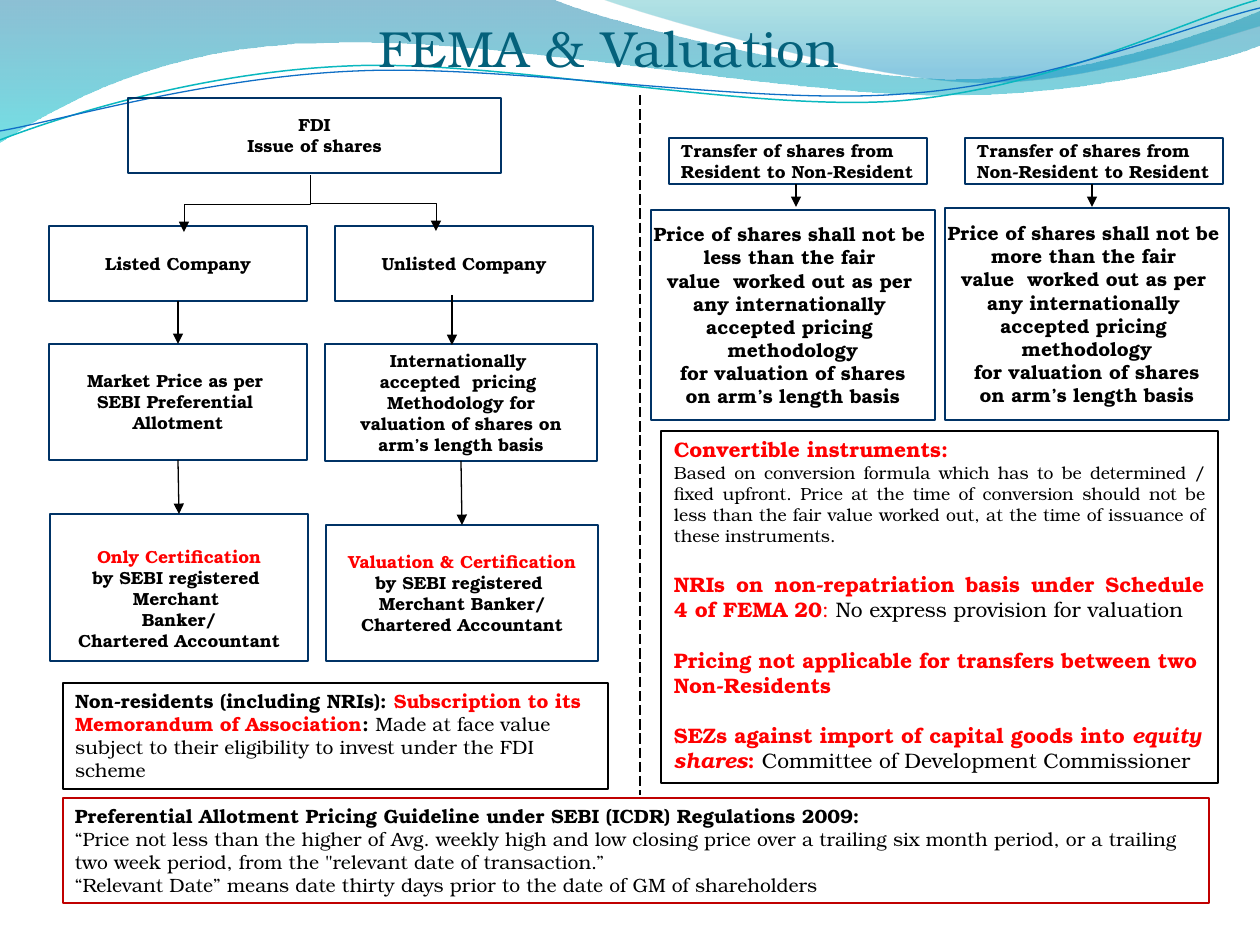
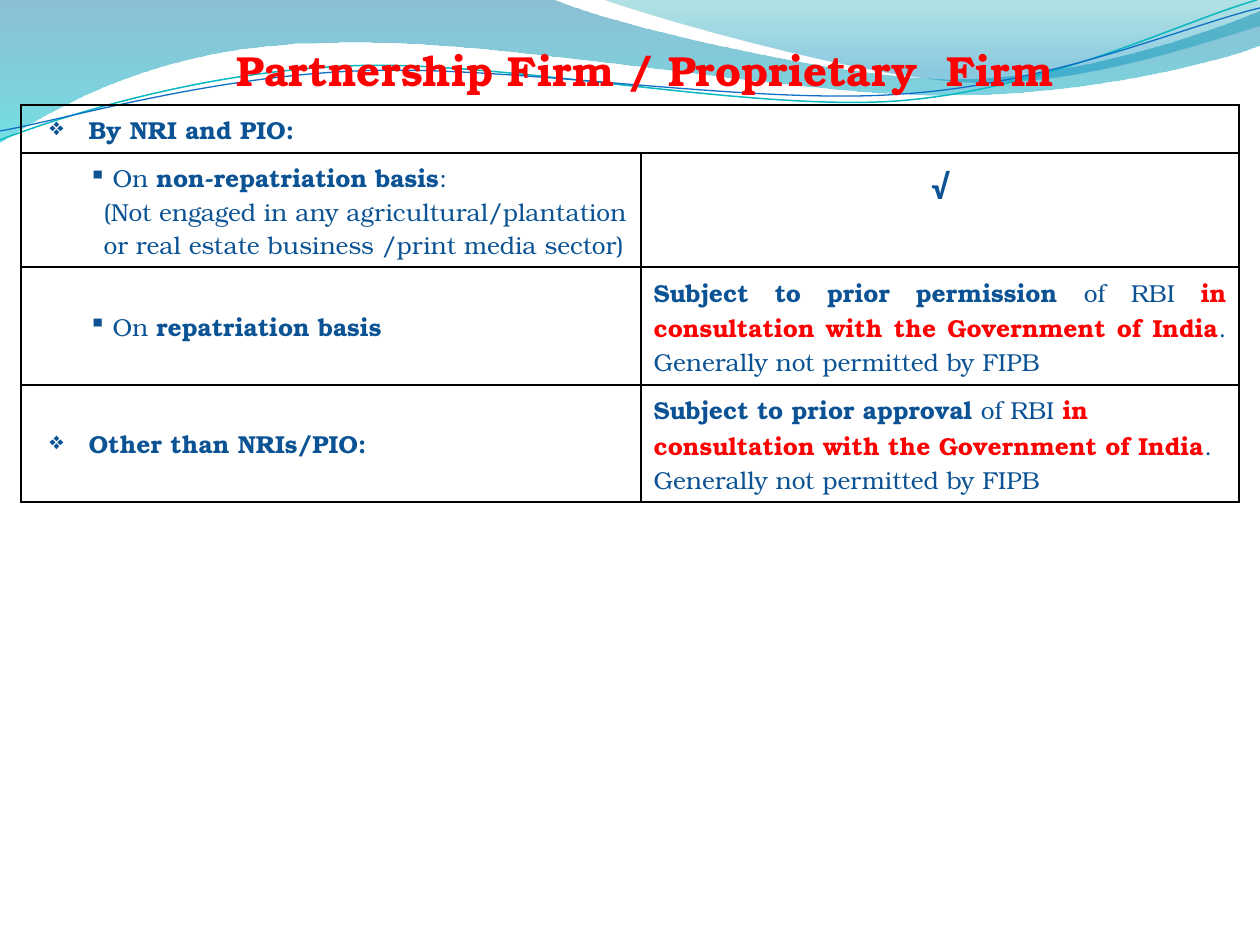
from lxml import etree
from pptx import Presentation
from pptx.dml.color import RGBColor
from pptx.enum.dml import MSO_LINE
from pptx.enum.shapes import MSO_CONNECTOR, MSO_SHAPE
from pptx.enum.text import MSO_ANCHOR, PP_ALIGN
from pptx.oxml.ns import qn
from pptx.util import Pt

SCALE = 914400 / 126
FONT = "TeX Gyre Bonum"
SIGNS = "OpenSymbol"

BLACK = RGBColor(0x00, 0x00, 0x00)
RED = RGBColor(0xFF, 0x00, 0x00)
CRIMSON = RGBColor(0xC0, 0x00, 0x00)
NAVY = RGBColor(0x00, 0x33, 0x66)
BLUE = RGBColor(0x0B, 0x53, 0x94)
TEAL = RGBColor(0x04, 0x61, 0x7B)
AQUA = RGBColor(0x0A, 0xB8, 0xBF)
AZURE = RGBColor(0x0F, 0x6F, 0xC6)
DEEP = RGBColor(0x00, 0x74, 0xA1)
CYAN = RGBColor(0x00, 0xC6, 0xCF)
GREEN = RGBColor(0x00, 0xA1, 0xA9)
SKY = RGBColor(0x00, 0x8B, 0xBF)

LEFT, CENTER, FULL = PP_ALIGN.LEFT, PP_ALIGN.CENTER, PP_ALIGN.JUSTIFY
TOP, MIDDLE, BOTTOM = MSO_ANCHOR.TOP, MSO_ANCHOR.MIDDLE, MSO_ANCHOR.BOTTOM
STRAIGHT, ELBOW = MSO_CONNECTOR.STRAIGHT, MSO_CONNECTOR.ELBOW
RECT, DASH = MSO_SHAPE.RECTANGLE, MSO_LINE.LONG_DASH

HOT = {"color": RED, "bold": True}
BOLD = {"bold": True}
PLAIN = {"bold": False}

# Each wave is a start point, then steps of one point (line) or three (curve).
BAND = [[(0, 0)], [(554, 0)],
        [(600, 21), (837, 79), (955, 79)], [(1075, 79), (1207, 33), (1260, 11)],
        [(1260, 45)],
        [(1239, 55), (1096, 96), (940, 95)], [(783, 95), (481, 35), (324, 43)],
        [(163, 45), (58, 105), (0, 142)]]
CREST = [[(604, 0)], [(642, 14), (859, 78), (969, 82)],
         [(1079, 87), (1211, 40), (1260, 26)], [(1260, 0)]]
RIPPLES = [
    (AQUA, 0.85, [[(0, 140)], [(60, 117), (199, 72), (349, 66)],
                  [(498, 59), (747, 112), (898, 101)],
                  [(1050, 89), (1182, 21), (1257, 0)]]),
    (AZURE, 0.75, [[(0, 131)], [(59, 121), (207, 77), (357, 71)],
                   [(508, 64), (752, 106), (903, 94)],
                   [(1053, 84), (1185, 26), (1260, 8)]]),
]


def px(value):
    return round(value * SCALE)


def wave(slide, steps, close):
    """Draw an outline, then bend each step of three points into a curve."""
    points = [(px(x), px(y)) for step in steps for x, y in step]
    pen = slide.shapes.build_freeform(*points[0], scale=1.0)
    pen.add_line_segments(points[1:], close=close)
    shape = pen.convert_to_shape()
    shape.shadow.inherit = False
    lines = iter(list(shape._element.spPr.iter(qn("a:lnTo"))))
    for step in steps[1:]:
        group = [next(lines) for _ in step]
        if len(group) == 3:
            curve = etree.Element(qn("a:cubicBezTo"))
            group[0].addprevious(curve)
            for line in group:
                curve.append(line[0])
                line.getparent().remove(line)
    return shape


def wash(slide, steps, stops):
    """Draw a closed wave; stops hold position, colour and opacity percent."""
    shape = wave(slide, steps, True)
    shape.fill.gradient()
    shape.fill.gradient_angle = 270
    for stop, (place, color, _) in zip(shape.fill.gradient_stops, stops):
        stop.position = place
        stop.color.rgb = color
    tints = shape._element.spPr.iter(qn("a:srgbClr"))
    for tint, (_, _, alpha) in zip(list(tints), stops):
        etree.SubElement(tint, qn("a:alpha"), val=str(alpha * 1000))
    shape.line.fill.background()


def waves(slide):
    wash(slide, BAND, [(0, DEEP, 45), (1, CYAN, 55)])
    wash(slide, CREST, [(0, GREEN, 30), (0.8, SKY, 45)])
    for color, width, steps in RIPPLES:
        shape = wave(slide, steps, False)
        shape.fill.background()
        shape.line.color.rgb = color
        shape.line.width = Pt(width)


def write(frame, paras, align=LEFT, anchor=TOP, wrap=True, pad=(12, 6, 12, 6),
          space=None, gaps=(), **base):
    """Fill a frame; a paragraph is a string or a list of (text, format)."""
    frame.word_wrap = wrap
    frame.vertical_anchor = anchor
    (frame.margin_left, frame.margin_top,
     frame.margin_right, frame.margin_bottom) = map(px, pad)
    for i, runs in enumerate(paras):
        para = frame.paragraphs[0] if i == 0 else frame.add_paragraph()
        para.alignment = align[i] if isinstance(align, list) else align
        if space:
            para.line_spacing = space
        if i in gaps:
            para.space_before = Pt(14.4)
        for text, own in [(runs, {})] if isinstance(runs, str) else runs:
            look = {"size": 10, "color": BLACK, "bold": False, "italic": False,
                    "name": FONT, **base, **own}
            run = para.add_run()
            run.text = text
            font = run.font
            font.name, font.size = look["name"], Pt(look["size"])
            font.bold, font.italic = look["bold"], look["italic"]
            font.color.rgb = look["color"]


def head(slide, area, text, **look):
    frame = slide.shapes.add_textbox(*map(px, area)).text_frame
    write(frame, [text], align=CENTER, **look)


def box(slide, area, paras, line=BLACK, width=0.75, **look):
    shape = slide.shapes.add_shape(RECT, *map(px, area))
    shape.shadow.inherit = False
    shape.fill.background()
    shape.line.color.rgb = line
    shape.line.width = Pt(width)
    write(shape.text_frame, paras, **look)
    return shape


def node(slide, area, paras, **look):
    """A box of the flow chart, with bold lines that do not wrap."""
    look = {"align": CENTER, "bold": True, **look}
    return box(slide, area, paras, NAVY, 1, anchor=MIDDLE, wrap=False, **look)


def link(slide, start, end, kind=STRAIGHT, width=0.75, dash=None, head=True):
    line = slide.shapes.add_connector(kind, *map(px, start + end))
    line.line.color.rgb = BLACK
    line.line.width = Pt(width)
    if dash:
        line.line.dash_style = dash
    props = line._element.spPr
    if head:
        etree.SubElement(props.find(qn("a:ln")), qn("a:tailEnd"), type="triangle")
    etree.SubElement(props, qn("a:effectLst"))
    return line


def join(slide, upper, lower):
    line = link(slide, (0, 0), (0, 0))
    line.begin_connect(upper, 2)
    line.end_connect(lower, 0)


def fork(slide, start, end):
    """Bent arrow that leaves downwards, runs sideways and ends downwards."""
    (x1, y1), (x2, y2) = start, end
    mid_x, mid_y = (x1 + x2) / 2, (y1 + y2) / 2
    side = 1 if x2 < x1 else -1
    half, drop = abs(x2 - x1) / 2, side * (y2 - y1) / 2
    line = link(slide, (mid_x - drop, mid_y - half), (mid_x + drop, mid_y + half),
                ELBOW, 0.25)
    turn = 90 if side > 0 else 270
    line._element.spPr.find(qn("a:xfrm")).set("rot", str(turn * 60000))


def flow(slide):
    node(slide, (128, 98, 373, 75), ["FDI", "Issue of shares"])
    listed = node(slide, (49, 226, 258, 75), ["Listed Company"])
    node(slide, (335, 226, 258, 75), ["Unlisted Company"])
    market = node(slide, (49, 344, 258, 116),
                  ["Market Price as per ", "SEBI Preferential ", "Allotment"])
    method = node(slide, (325, 344, 272, 117),
                  ["Internationally ", "accepted  pricing ", "Methodology for",
                   " valuation of shares on ", "arm’s length basis"])
    proof = node(slide, (50, 514, 258, 147),
                 [[("Only Certification", HOT)], "by SEBI registered ",
                  "Merchant ", "Banker/", "Chartered Accountant"],
                 pad=(12, 28, 12, 6))
    value = node(slide, (326, 525, 272, 136),
                 [[("Valuation & Certification", HOT)], "by SEBI registered ",
                  "Merchant Banker/", "Chartered Accountant"])
    fork(slide, (310, 176), (184, 232))
    fork(slide, (310, 175), (436, 231))
    for upper, lower in ((listed, market), (market, proof), (method, value)):
        join(slide, upper, lower)
    link(slide, (452, 295), (452, 345))


def deals(slide):
    """The two kinds of transfer, each with its price rule."""
    for x, left, top, way, limit in (
            (669, 651, 210, "Resident to Non-Resident", "less"),
            (965, 945, 208, "Non-Resident to Resident", "more")):
        node(slide, (x, 138, 258, 46), ["Transfer of shares from", way],
             align=LEFT)
        node(slide, (left, top, 284, 420 - top),
             ["Price of shares shall not be ", f"{limit} than the fair ",
              "value  worked out as per ", "any internationally ",
              "accepted pricing ", "methodology", " for valuation of shares ",
              "on arm’s length basis"], size=11)
        link(slide, (x + 127, 184), (x + 127, 207))


def notes(slide):
    box(slide, (661, 431, 557, 352), [
        [("Convertible instruments:", HOT)],
        [("Based on conversion formula which has to be determined / fixed upfront. "
          "Price at the time of conversion should not be less than the fair value "
          "worked out, at the time of issuance of these instruments. ",
          {"size": 10})],
        [("NRIs on non-repatriation basis under Schedule 4 of FEMA 20", HOT),
         (": ", {"color": RED}), ("No express provision for valuation", {})],
        [("Pricing not applicable for transfers between two Non-Residents", HOT)],
        [("SEZs against import of capital goods into ", HOT),
         ("equity shares", {**HOT, "italic": True}), (": ", HOT),
         ("Committee of Development Commissioner", {})],
    ], size=12, align=[FULL, FULL, FULL, LEFT, LEFT], gaps=(2, 3, 4),
        pad=(13, 6, 13, 6))
    box(slide, (63, 683, 545, 106), [[
        ("Non-residents (including NRIs): ", BOLD),
        ("Subscription to its Memorandum of Association", HOT), (": ", BOLD),
        ("Made at face value subject to their eligibility to invest under the "
         "FDI scheme", {})]], size=11)
    box(slide, (63, 798, 1146, 105), [
        [("Preferential Allotment Pricing Guideline under SEBI (ICDR) "
          "Regulations 2009:", BOLD)],
        "“Price not less than the higher of Avg. weekly high and low closing price "
        "over a trailing six month period, or a trailing two week period, from the "
        '"relevant date of transaction.”',
        "“Relevant Date” means date thirty days prior to the date of GM of "
        "shareholders"], CRIMSON, size=11)


def edge(cell):
    """Clear the cell and rule all four sides."""
    cell.fill.background()
    props = cell._tc.get_or_add_tcPr()
    for i, side in enumerate("LRTB"):
        line = etree.Element(qn(f"a:ln{side}"), w=str(Pt(1)))
        fill = etree.SubElement(line, qn("a:solidFill"))
        etree.SubElement(fill, qn("a:srgbClr"), val=str(BLACK))
        props.insert(i, line)


def mark(para, margin, hang=0, sign=None):
    props = para._p.get_or_add_pPr()
    props.set("marL", str(px(margin)))
    props.set("indent", str(px(-hang)))
    if sign:
        etree.SubElement(props, qn("a:buFont"), typeface=SIGNS)
        etree.SubElement(props, qn("a:buChar"), char=sign)


def rules(slide):
    """The table of entry rules for partnership and proprietary firms."""
    high = (48, 114, 118, 117)
    grid = slide.shapes.add_table(4, 2, *map(px, (21, 105, 1218, sum(high)))).table
    grid.first_row = grid.horz_banding = False
    for col, width in zip(grid.columns, (620, 598)):
        col.width = px(width)
    for row, height in zip(grid.rows, high):
        row.height = px(height)
        for cell in row.cells:
            edge(cell)
    grid.cell(0, 0).merge(grid.cell(0, 1))

    def fill(row, col, paras, marks=(), anchor=MIDDLE, **look):
        cell = grid.cell(row, col)
        look = {"size": 14, "color": BLUE, **look}
        write(cell.text_frame, paras, pad=(13, 6, 13, 6), **look)
        cell.vertical_anchor = anchor
        for para, place in zip(cell.text_frame.paragraphs, marks):
            mark(para, *place)

    main_mark, sub_mark = (55, 39, "❖"), (79, 24, "▪")
    fill(0, 0, ["By NRI and PIO:"], [main_mark], bold=True)
    fill(1, 0, [[("On ", {}), ("non-repatriation basis", BOLD), (":", {})],
                "(Not engaged in any agricultural/plantation or real estate "
                "business /print media sector)"], [sub_mark, (70,)])
    fill(1, 1, ["√"], anchor=TOP, align=CENTER, size=20, bold=True, space=1.15,
         name="Calibri")
    fill(2, 0, [[("On ", {}), ("repatriation basis", BOLD)]], [sub_mark])
    fill(2, 1, [[("Subject to prior permission ", BOLD), ("of RBI ", PLAIN),
                 ("in consultation with the Government of India", HOT),
                 (". Generally not permitted by FIPB", PLAIN)]], align=FULL)
    fill(3, 0, ["Other than NRIs/PIO:"], [main_mark], bold=True)
    fill(3, 1, [[("Subject to prior approval ", BOLD), ("of RBI ", PLAIN),
                 ("in", HOT)],
                [("consultation with the Government of India", HOT), (". ", PLAIN)],
                "Generally not permitted by FIPB"], align=FULL)


def main():
    deck = Presentation()
    deck.slide_width, deck.slide_height = px(1260), px(945)
    blank = deck.slide_layouts[6]

    fema = deck.slides.add_slide(blank)
    waves(fema)
    head(fema, (53, 21, 1124, 63), "FEMA & Valuation", size=29, color=TEAL,
         space=Pt(28.8), pad=(0, 6, 12, 6))
    flow(fema)
    deals(fema)
    link(fema, (640, 95), (640, 795), dash=DASH, head=False)
    notes(fema)

    firm = deck.slides.add_slide(blank)
    waves(firm)
    head(firm, (73, 0, 1144, 95), "Partnership Firm / Proprietary  Firm", size=24,
         color=RED, bold=True, anchor=BOTTOM, pad=(0, 6, 0, 0))
    rules(firm)

    deck.save("out.pptx")


if __name__ == "__main__":
    main()
